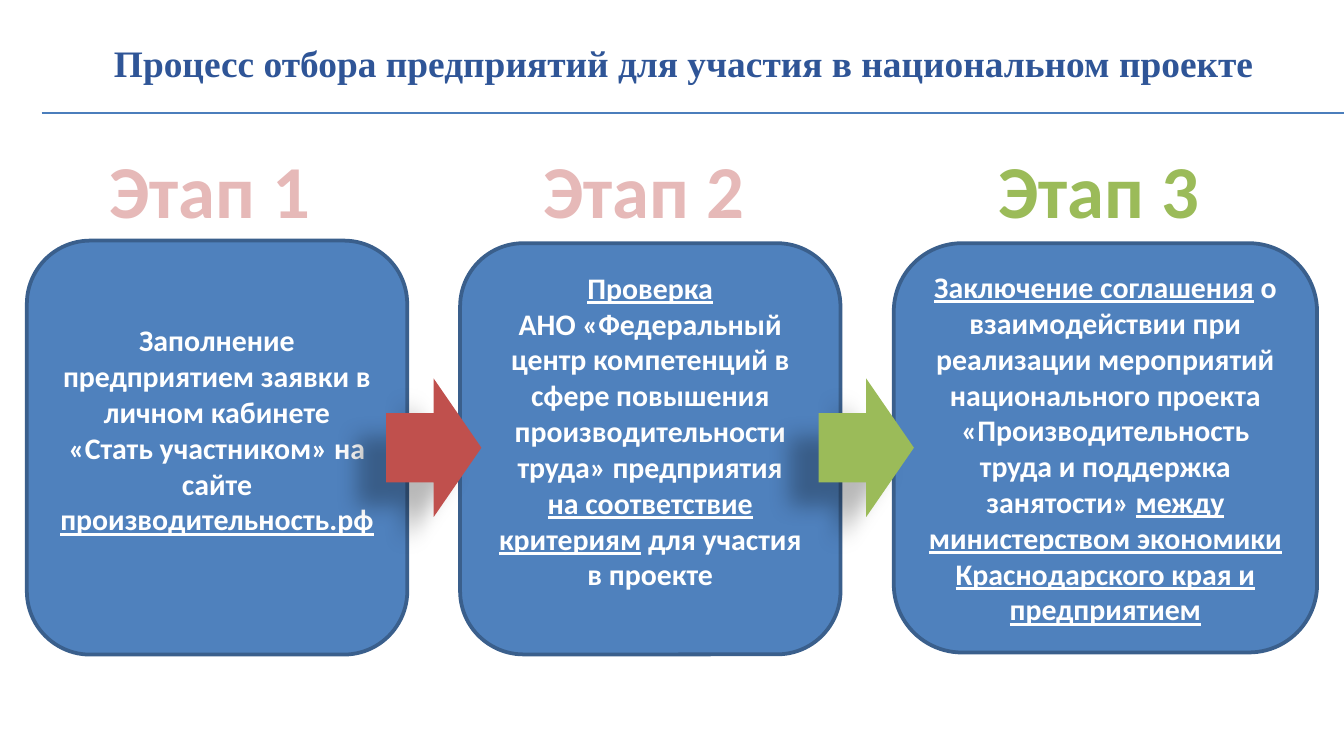
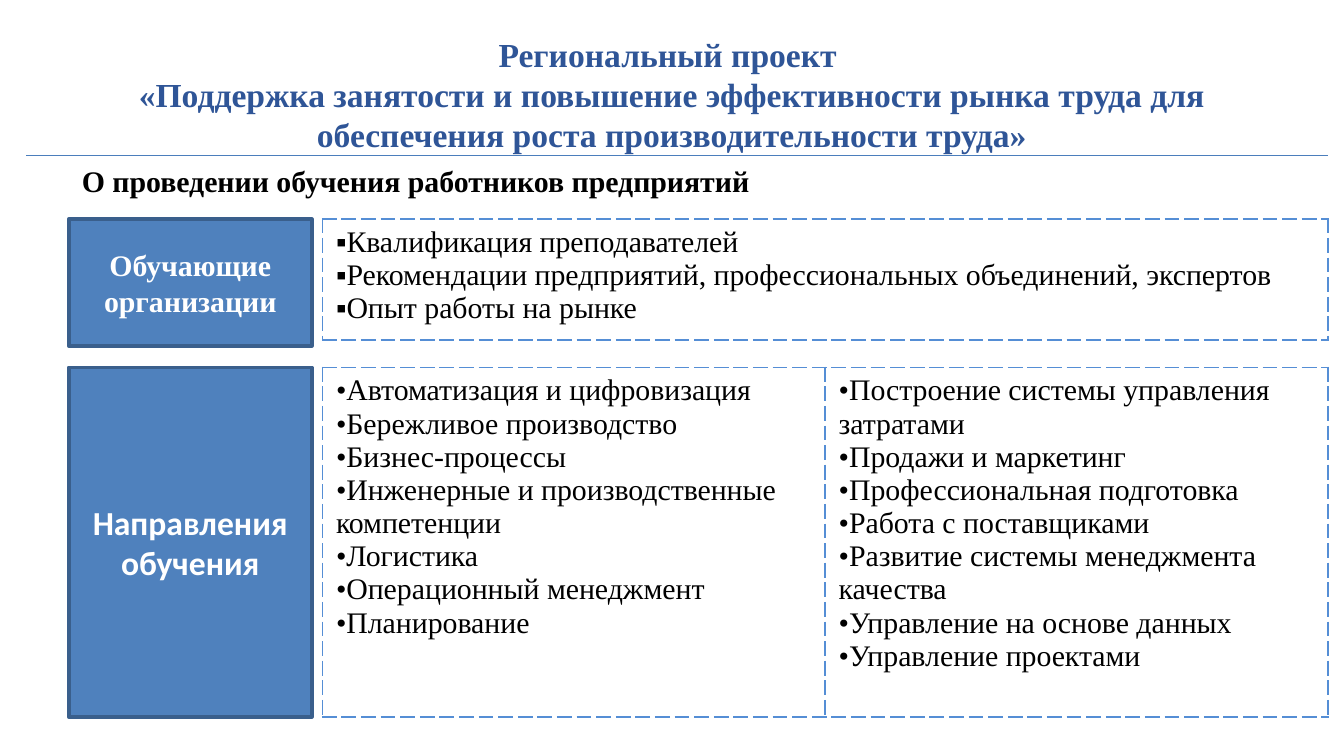
from dataclasses import dataclass

from lxml import etree
from pptx import Presentation
from pptx.dml.color import RGBColor
from pptx.enum import shapes, text
from pptx.oxml.ns import qn
from pptx.util import Pt

BLUE, EDGE, RULE, NAVY = "4F81BD", "3A5F8C", "4B7EBC", "2F5597"
RED, GREEN, PINK, DASH = "C0504D", "9BBB59", "E6B9B8", "558ED5"
WHITE, BLACK = "FFFFFF", "000000"
SERIF, SANS = "Times New Roman", "Calibri"
SHAPE, ALIGN, ANCHOR = shapes.MSO_SHAPE, text.PP_ALIGN, text.MSO_ANCHOR

# Text formats
TITLE = dict(name=SERIF, size=20, color=NAVY, bold=True)
HEAD = TITLE | dict(size=18)
LEAD = dict(name=SERIF, size=16, color=BLACK, bold=True)
ITEM = LEAD | dict(bold=False)
STEP = dict(name=SANS, size=16, color=WHITE, bold=True)
STAGE = dict(name=SANS, size=40, bold=True)


@dataclass
class Area:
    left: float
    top: float
    width: float
    height: float

    def pts(self) -> tuple:
        return tuple(Pt(v) for v in (self.left, self.top, self.width, self.height))


@dataclass
class Step:
    area: Area
    runs: list  # (words, underlined); a line feed is a line break
    foot: float = 3.6


@dataclass
class Stage:
    area: Area
    label: str
    color: str
    edge: str = ""
    wrap: bool = True


@dataclass
class Side:
    area: Area
    label: str
    fmt: dict


@dataclass
class Grid:
    area: Area
    mark: str
    lists: list
    fill: str = ""


def paint(target, color: str) -> None:
    """Give a fill or a line one solid colour."""
    target.fill.solid()
    target.fill.fore_color.rgb = RGBColor.from_string(color)


def sub(parent, tag: str, **attrs):
    return etree.SubElement(parent, qn(tag), {k: str(v) for k, v in attrs.items()})


def style(font, fmt: dict) -> None:
    for key, val in fmt.items():
        if key == "color":
            font.color.rgb = RGBColor.from_string(val)
        else:
            setattr(font, key, Pt(val) if key == "size" else val)


def write(para, runs: list, fmt: dict) -> None:
    for words, under in runs:
        for pos, part in enumerate(words.split("\n")):
            if pos:
                para.add_line_break()
            if part:
                run = para.add_run()
                run.text = part
                style(run.font, fmt | ({"underline": True} if under else {}))


def fill_in(shape, runs: list, fmt: dict, **opts) -> None:
    """Write one paragraph into a shape; opts are frame settings."""
    frame = shape.text_frame
    base = dict(word_wrap=True, vertical_anchor=ANCHOR.MIDDLE)
    align = opts.pop("align", ALIGN.CENTER)
    for key, val in (base | opts).items():
        setattr(frame, key, val)
    para = frame.paragraphs[0]
    para.alignment = align
    write(para, runs, fmt)


def add_box(slide, kind, area: Area, color: str, edge: str = ""):
    box = slide.shapes.add_shape(kind, *area.pts())
    box.shadow.inherit = False
    paint(box, color)
    if edge:
        paint(box.line, edge)
        box.line.width = Pt(2)
    else:
        box.line.fill.background()
    return box


def add_text(slide, area: Area, words: str, fmt: dict, **opts):
    box = slide.shapes.add_textbox(*area.pts())
    fill_in(box, [(words, False)], fmt, **opts)
    return box


def add_rule(slide, left: float, right: float, y: float) -> None:
    rule = slide.shapes.add_connector(
        shapes.MSO_CONNECTOR.STRAIGHT, Pt(left), Pt(y), Pt(right), Pt(y))
    paint(rule.line, RULE)
    rule.line.width = Pt(0.75)
    sub(rule._element.spPr, "a:effectLst")


def add_arrow(slide, area: Area, color: str) -> None:
    arrow = add_box(slide, SHAPE.RIGHT_ARROW, area, color)
    effect = arrow._element.spPr.find(qn("a:effectLst"))
    shade = sub(effect, "a:outerShdw", blurRad=Pt(11.8), dist=Pt(19.7),
                dir=141 * 60000, algn="ctr", rotWithShape=0)
    sub(sub(shade, "a:srgbClr", val=BLACK), "a:alpha", val=28000)


def add_stage(slide, stage: Stage) -> None:
    box = add_text(slide, stage.area, stage.label, STAGE | dict(color=stage.color),
                   word_wrap=stage.wrap, vertical_anchor=ANCHOR.TOP,
                   auto_size=text.MSO_AUTO_SIZE.SHAPE_TO_FIT_TEXT)
    if stage.edge:
        props = box.text_frame.paragraphs[0].runs[0].font._element
        line = etree.Element(qn("a:ln"), w=str(Pt(1.75)))
        sub(sub(line, "a:solidFill"), "a:srgbClr", val=stage.edge)
        props.insert(0, line)


def add_grid(slide, grid: Grid) -> None:
    """Draw a one-row table of bulleted lists with dashed borders."""
    frame = slide.shapes.add_table(1, len(grid.lists), *grid.area.pts())
    table = frame.table
    for key in ("first_row", "horz_banding"):
        setattr(table, key, False)
    for cell, items in zip(table.rows[0].cells, grid.lists):
        body = cell.text_frame
        for pos, words in enumerate(items):
            para = body.add_paragraph() if pos else body.paragraphs[0]
            props = para._p.get_or_add_pPr()
            props.set("marL", "0")
            props.set("indent", "0")
            sub(props, "a:buFont", typeface=SERIF)
            sub(props, "a:buChar", char=grid.mark)
            write(para, [(words, False)], ITEM)
        # Borders precede the fill in the cell properties
        props = cell._tc.get_or_add_tcPr()
        for side in "LRTB":
            line = sub(props, f"a:ln{side}", w=Pt(1))
            sub(sub(line, "a:solidFill"), "a:srgbClr", val=DASH)
            sub(line, "a:prstDash", val="sysDash")
        if grid.fill:
            paint(cell, grid.fill)
        else:
            cell.fill.background()


# Selection process
STEPS = [
    Step(Area(14.4, 128.9, 203.8, 221.8), [
        ("Заполнение предприятием заявки в личном кабинете "
         "«Стать участником» на сайте ", False),
        ("производительность.рф", True)], foot=23),
    Step(Area(246.5, 130.3, 203.8, 220.3), [
        ("Проверка\n", True),
        ("АНО «Федеральный центр компетенций в сфере повышения "
         "производительности труда» предприятия\n", False),
        ("на соответствие критериям", True),
        (" для участия в проекте", False)], foot=23),
    Step(Area(478.8, 130.3, 226.8, 219.3), [
        ("Заключение соглашения", True),
        (" о взаимодействии при реализации мероприятий национального проекта "
         "«Производительность труда и поддержка занятости» ", False),
        ("между министерством экономики Краснодарского края и предприятием", True)]),
]
STAGES = [
    Stage(Area(31, 73.4, 162.7, 55.4), "Этап 1", PINK, RED),
    Stage(Area(263.5, 73.4, 162.7, 55.4), "Этап 2", PINK, RED),
    Stage(Area(527.2, 73.4, 123, 55.4), "Этап 3", GREEN, wrap=False),
]
ARROWS = [(206.8, RED), (438.5, GREEN)]

# Training of staff
COL, WIDE = 36.8, 130.3
SIDES = [
    Side(Area(COL, 117.4, WIDE, 67.9), "Обучающие организации",
         STEP | dict(name=SERIF)),
    Side(Area(COL, 196.9, WIDE, 187.2), "Направления обучения", STEP | dict(size=18)),
]
GRIDS = [
    Grid(Area(172.8, 117.4, 538.6, 64.8), "▪", [[
        "Квалификация преподавателей",
        "Рекомендации предприятий, профессиональных объединений, экспертов",
        "Опыт работы на рынке"]]),
    Grid(Area(172.8, 196.9, 538.6, 187.2), "•", [
        ["Автоматизация и цифровизация", "Бережливое производство",
         "Бизнес-процессы", "Инженерные и производственные компетенции",
         "Логистика", "Операционный менеджмент", "Планирование"],
        ["Построение системы управления затратами", "Продажи и маркетинг",
         "Профессиональная подготовка", "Работа с поставщиками",
         "Развитие системы менеджмента качества",
         "Управление на основе данных", "Управление проектами"]], WHITE),
]


def draw_steps(slide) -> None:
    add_text(slide, Area(31.3, 15.5, 670.3, 36),
             "Процесс отбора предприятий для участия в национальном проекте", TITLE)
    add_rule(slide, 22.3, 720, 60.6)
    for step in STEPS:
        box = add_box(slide, SHAPE.ROUNDED_RECTANGLE, step.area, BLUE, EDGE)
        fill_in(box, step.runs, STEP, margin_bottom=Pt(step.foot))
    for left, color in ARROWS:
        add_arrow(slide, Area(left, 202.8, 51.1, 74.2), color)
    for stage in STAGES:
        add_stage(slide, stage)


def draw_plan(slide) -> None:
    add_text(slide, Area(COL, 83.5, 648, 34.6),
             "О проведении обучения работников предприятий", LEAD,
             align=ALIGN.LEFT, vertical_anchor=ANCHOR.TOP, margin_top=Pt(3.6))
    add_text(slide, Area(36, 16.6, 648, 67.7),
             "Региональный проект \n«Поддержка занятости и повышение эффективности "
             "рынка труда для обеспечения роста производительности труда»", HEAD)
    for side in SIDES:
        box = add_box(slide, SHAPE.RECTANGLE, side.area, BLUE, EDGE)
        fill_in(box, [(side.label, False)], side.fmt)
    for grid in GRIDS:
        add_grid(slide, grid)
    add_rule(slide, 14.2, 711.4, 83.3)


def main() -> None:
    deck = Presentation()
    deck.slide_width, deck.slide_height = Pt(720), Pt(405)
    for draw in (draw_steps, draw_plan):
        draw(deck.slides.add_slide(deck.slide_layouts[6]))
    deck.save("out.pptx")


if __name__ == "__main__":
    main()
